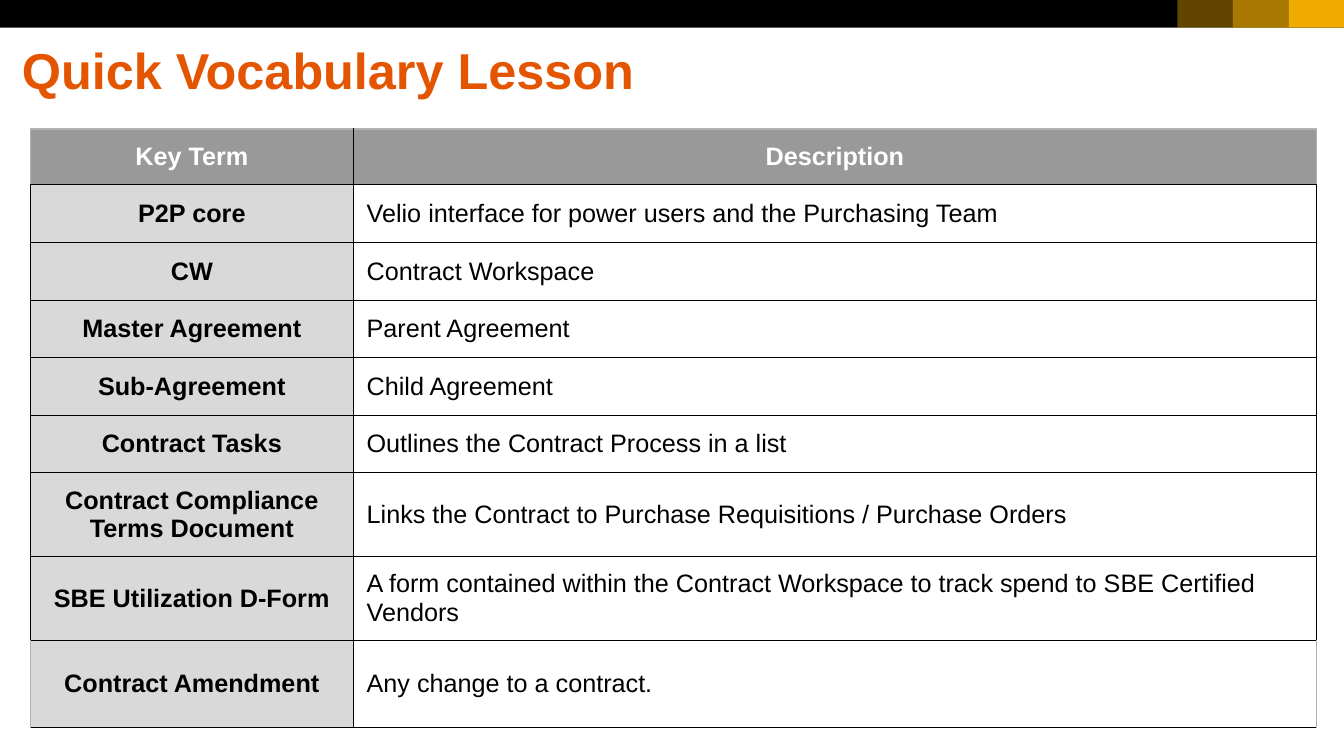
from lxml import etree
from pptx import Presentation
from pptx.dml.color import RGBColor
from pptx.enum.shapes import MSO_SHAPE
from pptx.enum.text import MSO_ANCHOR, MSO_AUTO_SIZE, PP_ALIGN
from pptx.oxml.ns import qn
from pptx.util import Cm, Pt

RECTANGLE = MSO_SHAPE.RECTANGLE
MIDDLE = MSO_ANCHOR.MIDDLE
NO_FIT = MSO_AUTO_SIZE.NONE
LEFT, CENTER = PP_ALIGN.LEFT, PP_ALIGN.CENTER

BLACK = RGBColor(0x00, 0x00, 0x00)
WHITE = RGBColor(0xFF, 0xFF, 0xFF)
ORANGE = RGBColor(0xE3, 0x55, 0x00)
GOLD = RGBColor(0xF0, 0xAB, 0x00)
HEADER_GRAY = RGBColor(0x99, 0x99, 0x99)
TERM_GRAY = RGBColor(0xD9, 0xD9, 0xD9)
EDGE_GRAY = RGBColor(0xB2, 0xB2, 0xB2)

TITLE_ONLY = 5
WIDTH, BAND_HEIGHT, BLOCK_WIDTH = 33.87, 0.7, 1.4
COLUMN_WIDTHS = [8.15, 24.26]
ROW_HEIGHTS = [1.41] + [1.45] * 5 + [2.11] * 2 + [2.2]
TERMS = [
    ("Key Term", "Description"),
    ("P2P core", "Velio interface for power users and the Purchasing Team"),
    ("CW", "Contract Workspace"),
    ("Master Agreement", "Parent Agreement"),
    ("Sub-Agreement", "Child Agreement"),
    ("Contract Tasks", "Outlines the Contract Process in a list"),
    ("Contract Compliance Terms Document",
     "Links the Contract to Purchase Requisitions / Purchase Orders"),
    ("SBE Utilization D-Form",
     "A form contained within the Contract Workspace to track spend to SBE Certified Vendors"),
    ("Contract Amendment", "Any change to a contract."),
]


def write(frame, text, size=18, color=BLACK, bold=False, align=LEFT, spacing=1.0):
    frame.word_wrap = True
    frame.vertical_anchor = MIDDLE
    para = frame.paragraphs[0]
    para.alignment = align
    para.line_spacing = spacing
    span = para.add_run()
    span.text = text
    span.font.name = "Arial"
    span.font.size = Pt(size)
    span.font.bold = bold
    span.font.color.rgb = color


class VocabularySlide:
    def __init__(self, deck):
        self.page = deck.slides.add_slide(deck.slide_layouts[TITLE_ONLY])

    def title(self, text, left, top, width, height):
        box = self.page.shapes.title
        box.left, box.top, box.width, box.height = Cm(left), Cm(top), Cm(width), Cm(height)
        write(box.text_frame, text, size=36, color=ORANGE, bold=True, spacing=0.9)
        box.text_frame.auto_size = NO_FIT

    def band(self, left, width, color, opacity=100):
        box = self.page.shapes.add_shape(RECTANGLE, Cm(left), 0, Cm(width), Cm(BAND_HEIGHT))
        box.shadow.inherit = False
        box.fill.solid()
        box.fill.fore_color.rgb = color
        box.line.fill.background()
        if opacity < 100:
            tint = box.fill._xPr.find(".//" + qn("a:srgbClr"))
            etree.SubElement(tint, qn("a:alpha"), val=str(opacity * 1000))

    def borders(self, cell, colors):
        properties = cell._tc.get_or_add_tcPr()
        for index, (side, color) in enumerate(zip("LRTB", colors)):
            width = Pt(1) if color == EDGE_GRAY else Pt(0.75)
            line = etree.Element(qn(f"a:ln{side}"), w=str(width))
            fill = etree.SubElement(line, qn("a:solidFill"))
            etree.SubElement(fill, qn("a:srgbClr"), val=str(color))
            properties.insert(index, line)

    def table(self, rows, left, top):
        frame = self.page.shapes.add_table(
            len(rows), len(COLUMN_WIDTHS), Cm(left), Cm(top),
            Cm(sum(COLUMN_WIDTHS)), Cm(sum(ROW_HEIGHTS)))
        grid = frame.table
        for column, width in zip(grid.columns, COLUMN_WIDTHS):
            column.width = Cm(width)
        for row, height in zip(grid.rows, ROW_HEIGHTS):
            row.height = Cm(height)
        for r, texts in enumerate(rows):
            header, last = r == 0, r == len(rows) - 1
            side = EDGE_GRAY if header or last else BLACK
            for c, text in enumerate(texts):
                term = c == 0
                cell = grid.cell(r, c)
                cell.margin_left = cell.margin_right = Cm(0.33)
                cell.margin_top = cell.margin_bottom = Cm(0.33)
                cell.vertical_anchor = MIDDLE
                cell.fill.solid()
                cell.fill.fore_color.rgb = HEADER_GRAY if header else TERM_GRAY if term else WHITE
                write(cell.text_frame, text, color=WHITE if header else BLACK,
                      bold=header or term, align=CENTER if header or term else LEFT)
                self.borders(cell, [side if term else BLACK, BLACK if term else side,
                                    EDGE_GRAY if header else BLACK, BLACK])


def main():
    deck = Presentation()
    deck.slide_width, deck.slide_height = Cm(WIDTH), Cm(19.05)
    slide = VocabularySlide(deck)
    slide.band(0, WIDTH, BLACK)
    for place, opacity in enumerate([100, 70, 40], start=1):
        slide.band(WIDTH - place * BLOCK_WIDTH, BLOCK_WIDTH, GOLD, opacity)
    slide.table(TERMS, 0.76, 3.25)
    slide.title("Quick Vocabulary Lesson", 0.3, 0.45, 30.2, 2.8)
    deck.save("out.pptx")


if __name__ == "__main__":
    main()
